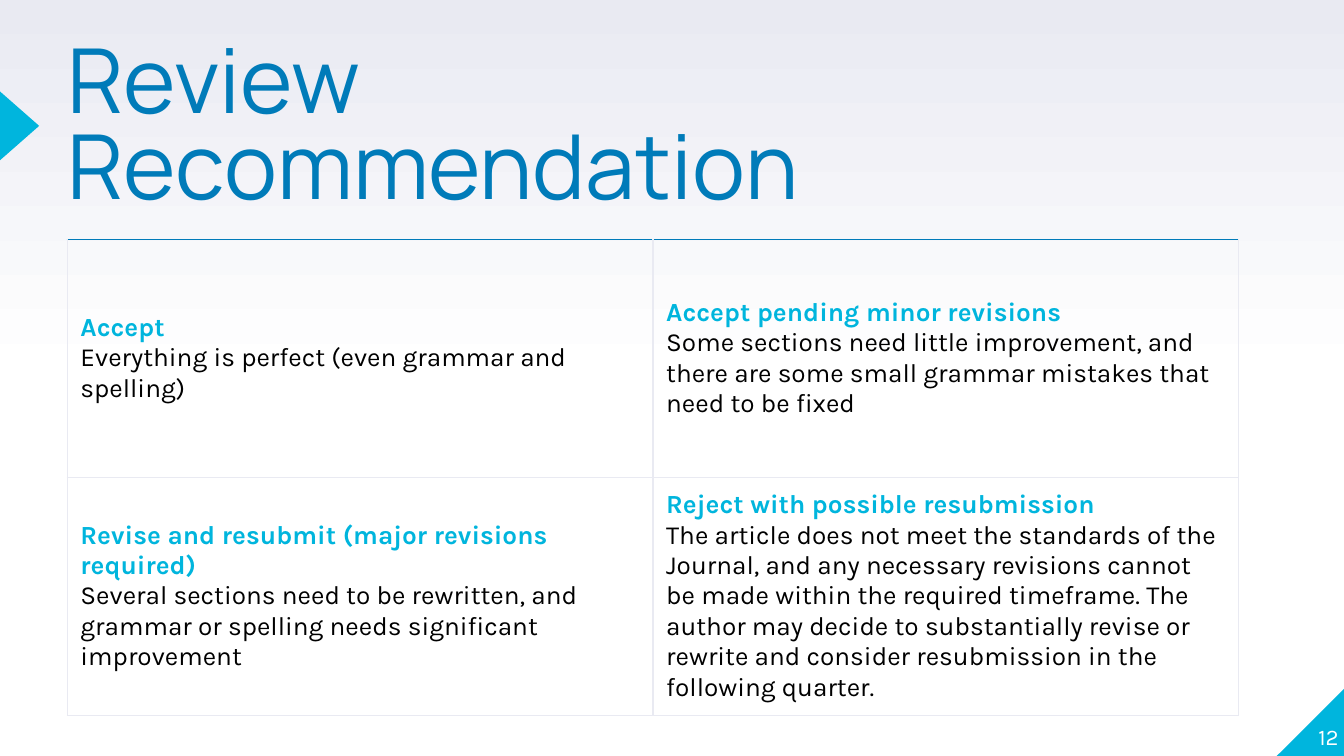
from lxml import etree
from pptx import Presentation
from pptx import util as u
from pptx.dml.color import RGBColor
from pptx.enum import shapes, text
from pptx.oxml import ns

CYAN, BLUE, PALE, WHITE, BLACK = "00B5DD", "007BB9", "E9EAF2", "FFFFFF", "000000"


def rgb(value):
    return RGBColor.from_string(value)


def style(p, name, size, color, bold=False):
    p.font.name = name
    p.font.size = u.Pt(size)
    p.font.bold = bold
    p.font.color.rgb = rgb(color)


prs = Presentation()
prs.slide_width, prs.slide_height = u.Cm(25.4), u.Cm(14.29)
s = prs.slides.add_slide(prs.slide_layouts[5])

fill = s.background.fill
fill.gradient()
fill.gradient_angle = 90
for stop, (position, color) in zip(fill.gradient_stops, [(0.5, WHITE), (1, PALE)]):
    stop.position = position
    stop.color.rgb = rgb(color)

triangles = [
    (shapes.MSO_SHAPE.RIGHT_TRIANGLE, 24.13, 12.99, 1.3, 1.3, 270),
    (shapes.MSO_SHAPE.ISOSCELES_TRIANGLE, -0.28, 2.01, 1.3, 0.74, 90),
]
for kind, x, y, w, h, angle in triangles:
    sp = s.shapes.add_shape(kind, u.Cm(x), u.Cm(y), u.Cm(w), u.Cm(h))
    sp.rotation = angle
    sp.shadow.inherit = False
    sp.fill.solid()
    sp.fill.fore_color.rgb = rgb(CYAN)
    sp.line.fill.background()

title = s.shapes.title
title.left, title.top, title.width, title.height = u.Cm(1.27), u.Cm(0.84), u.Cm(15.67), u.Cm(3)
number = s.shapes.add_textbox(u.Cm(24.03), u.Cm(12.88), u.Cm(1.27), u.Cm(1.3))
labels = [
    (title, "Review Recommendation", "Manrope", 48, BLUE, text.PP_ALIGN.LEFT, text.MSO_ANCHOR.TOP),
    (number, "12", "Karla", 12, WHITE, text.PP_ALIGN.RIGHT, text.MSO_ANCHOR.BOTTOM),
]
for sp, words, name, size, color, align, anchor in labels:
    tf = sp.text_frame
    tf.text = words
    tf.word_wrap = True
    tf.auto_size = text.MSO_AUTO_SIZE.NONE
    tf.vertical_anchor = anchor
    tf.margin_left = tf.margin_right = tf.margin_top = tf.margin_bottom = 0
    p = tf.paragraphs[0]
    p.alignment = align
    style(p, name, size, color)
title.text_frame.paragraphs[0].line_spacing = 0.8

recommendations = [
    [
        ("Accept", "Everything is perfect (even grammar and spelling)"),
        ("Accept pending minor revisions",
         "Some sections need little improvement, and there are some small grammar "
         "mistakes that need to be fixed"),
    ],
    [
        ("Revise and resubmit (major revisions required)",
         "Several sections need to be rewritten, and grammar or spelling needs "
         "significant improvement"),
        ("Reject with possible resubmission",
         "The article does not meet the standards of the Journal, and any necessary "
         "revisions cannot be made within the required timeframe. The author may decide "
         "to substantially revise or rewrite and consider resubmission in the following "
         "quarter."),
    ],
]
table = s.shapes.add_table(2, 2, u.Cm(1.27), u.Cm(4.52), u.Cm(22.14), u.Cm(9)).table
table.first_row = table.horz_banding = False
for i, row in enumerate(recommendations):
    for j, (heading, detail) in enumerate(row):
        cell = table.cell(i, j)
        cell.vertical_anchor = text.MSO_ANCHOR.MIDDLE
        cell.margin_left = cell.margin_right = u.Cm(0.25)
        cell.margin_top = cell.margin_bottom = u.Cm(0.18)
        tf = cell.text_frame
        tf.text = f"{heading}\n{detail}"
        style(tf.paragraphs[0], "Karla", 14, CYAN, True)
        style(tf.paragraphs[1], "Karla", 14, BLACK)
        tcPr = cell._tc.get_or_add_tcPr()
        for side in ("L", "R", "T", "B"):
            ln = etree.SubElement(tcPr, ns.qn(f"a:ln{side}"), w=str(u.Pt(0.75)))
            solid = etree.SubElement(ln, ns.qn("a:solidFill"))
            color = BLUE if side == "T" and i == 0 else PALE
            etree.SubElement(solid, ns.qn("a:srgbClr"), val=color)
        cell.fill.background()

prs.save("out.pptx")
